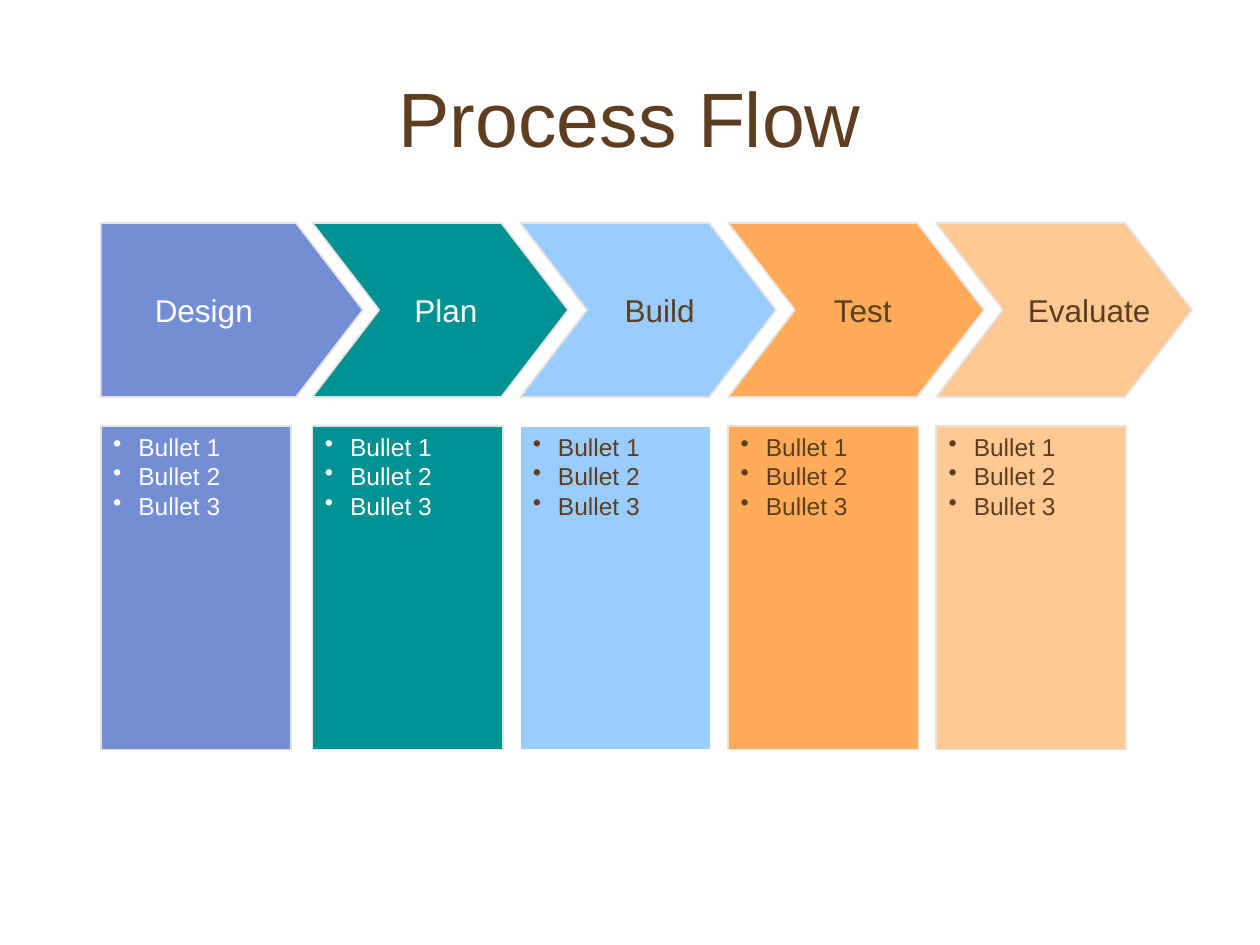
from lxml import etree
from pptx import Presentation
from pptx import util as u
from pptx.dml import color
from pptx.enum import shapes, text
from pptx.oxml import ns

BROWN, WHITE, GREY = "5D3E21", "FFFFFF", "E8E1E1"
BULLETS = ["Bullet 1", "Bullet 2", "Bullet 3"]
FIRST_LEFT, SECOND_LEFT, STEP = 0.8, 2.48, 1.65
ARROW_TOP, ARROW_HEIGHT, TIP = 1.77, 1.38, 0.53
STAGES = [
    ("Design", 1.13, 0.98, "748ED6", WHITE, GREY),
    ("Plan", 3.19, 0.7, "009193", WHITE, GREY),
    ("Build", 4.86, 0.76, "99CCFF", BROWN, WHITE),
    ("Test", 6.52, 0.69, "FFAB57", BROWN, GREY),
    ("Evaluate", 8.06, 1.17, "FFC993", BROWN, GREY),
]


def rgb(value):
    """Return the colour for a hex string."""
    return color.RGBColor.from_string(value)


def paint(shape, fill, line):
    """Give a shape a flat fill and a thin outline."""
    shape.shadow.inherit = False
    shape.fill.solid()
    shape.fill.fore_color.rgb = rgb(fill)
    shape.line.color.rgb = rgb(line)
    shape.line.width = u.Pt(1)


def add_bullet(paragraph):
    """Give a paragraph a round bullet with a hanging indent."""
    properties = paragraph._p.get_or_add_pPr()
    properties.set("marL", str(u.Inches(0.2)))
    properties.set("indent", str(u.Inches(-0.2)))
    etree.SubElement(properties, ns.qn("a:buChar")).set("char", "•")


def write(shape, lines, size=18, fill=BROWN, align=text.PP_ALIGN.LEFT,
          anchor=text.MSO_ANCHOR.TOP, wrap=True, bullets=False):
    """Fill a shape with formatted lines of text."""
    frame = shape.text_frame
    frame.word_wrap = wrap
    frame.vertical_anchor = anchor
    frame.text = "\n".join(lines)
    for paragraph in frame.paragraphs:
        if bullets:
            add_bullet(paragraph)
        paragraph.alignment = align
        paragraph.font.size = u.Pt(size)
        paragraph.font.name = "Arial"
        paragraph.font.color.rgb = rgb(fill)


def add_title(slide, title):
    """Add the centred slide title."""
    box = slide.shapes.add_textbox(u.Inches(0.5), u.Inches(0.3), u.Inches(9), u.Inches(1.25))
    write(box, [title], size=44, align=text.PP_ALIGN.CENTER, anchor=text.MSO_ANCHOR.MIDDLE)


def add_column(slide, left, fill, ink, line):
    """Add the bulleted column below an arrow."""
    column = slide.shapes.add_shape(
        shapes.MSO_SHAPE.RECTANGLE, u.Inches(left), u.Inches(3.38), u.Inches(1.51), u.Inches(2.57))
    paint(column, fill, line)
    write(column, BULLETS, size=14, fill=ink, bullets=True)


def add_arrow(slide, left, fill, body, notched):
    """Add a stage arrow, with a notch on its left side if asked."""
    middle, bottom = ARROW_TOP + ARROW_HEIGHT / 2, ARROW_TOP + ARROW_HEIGHT
    right = left + body
    points = [(right, ARROW_TOP), (right + TIP, middle), (right, bottom), (left, bottom)]
    if notched:
        points.append((left + TIP, middle))
    builder = slide.shapes.build_freeform(u.Inches(left), u.Inches(ARROW_TOP))
    builder.add_line_segments([(u.Inches(x), u.Inches(y)) for x, y in points], close=True)
    paint(builder.convert_to_shape(), fill, GREY)


def add_label(slide, name, left, width, ink):
    """Add the name of a stage on its arrow."""
    box = slide.shapes.add_textbox(u.Inches(left), u.Inches(2.26), u.Inches(width), u.Inches(0.4))
    write(box, [name], fill=ink, wrap=False)
    box.text_frame.auto_size = text.MSO_AUTO_SIZE.SHAPE_TO_FIT_TEXT


def main():
    """Build the process flow slide."""
    presentation = Presentation()
    presentation.slide_width, presentation.slide_height = u.Inches(10), u.Inches(7.5)
    slide = presentation.slides.add_slide(presentation.slide_layouts[6])
    add_title(slide, "Process Flow")
    for index, (name, label_left, label_width, fill, ink, line) in enumerate(STAGES):
        left = SECOND_LEFT + (index - 1) * STEP if index else FIRST_LEFT
        add_column(slide, left, fill, ink, line)
        add_arrow(slide, left, fill, body=1.5 if index else 1.55, notched=index > 0)
        add_label(slide, name, label_left, label_width, ink)
    presentation.save("out.pptx")


if __name__ == "__main__":
    main()
